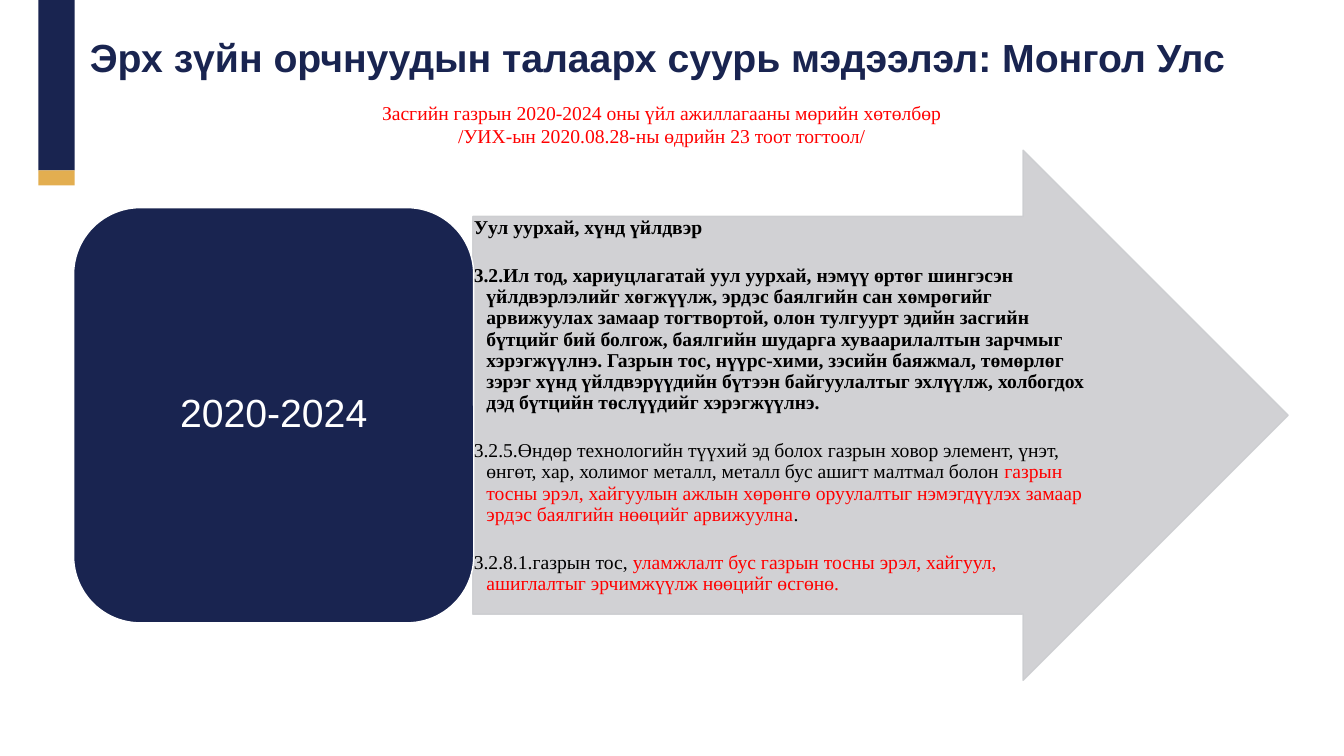
from lxml.etree import SubElement
from pptx import Presentation
from pptx.dml.color import RGBColor
from pptx.enum.shapes import MSO_SHAPE
from pptx.enum.text import MSO_ANCHOR, PP_ALIGN
from pptx.oxml.ns import qn
from pptx.util import Pt

NAVY, GOLD, GREY = "192450", "E3AE50", "CCCDD0"
BLACK, RED, WHITE = "000000", "FF0000", "FFFFFF"
SERIF, SANS = "Times New Roman", "Arial"

TITLE = "Эрх зүйн орчнуудын талаарх суурь мэдээлэл: Монгол Улс"
PROGRAMME = [
    "Засгийн газрын 2020-2024 оны үйл ажиллагааны мөрийн хөтөлбөр",
    "/УИХ-ын 2020.08.28-ны өдрийн 23 тоот тогтоол/",
]
# Each goal is a list of (text, colour, bold) spans
GOALS = [
    [("Уул уурхай, хүнд үйлдвэр", BLACK, True)],
    [("3.2.Ил тод, хариуцлагатай уул уурхай, нэмүү өртөг шингэсэн "
      "үйлдвэрлэлийг хөгжүүлж, эрдэс баялгийн сан хөмрөгийг арвижуулах "
      "замаар тогтвортой, олон тулгуурт эдийн засгийн бүтцийг бий болгож, "
      "баялгийн шударга хуваарилалтын зарчмыг хэрэгжүүлнэ. Газрын тос, "
      "нүүрс-хими, зэсийн баяжмал, төмөрлөг зэрэг хүнд үйлдвэрүүдийн бүтээн "
      "байгуулалтыг эхлүүлж, холбогдох дэд бүтцийн төслүүдийг "
      "хэрэгжүүлнэ.", BLACK, True)],
    [("3.2.5.Өндөр технологийн түүхий эд болох газрын ховор элемент, үнэт, "
      "өнгөт, хар, холимог металл, металл бус ашигт малтмал болон ",
      BLACK, False),
     ("газрын тосны эрэл, хайгуулын ажлын хөрөнгө оруулалтыг нэмэгдүүлэх "
      "замаар эрдэс баялгийн нөөцийг арвижуулна", RED, False),
     (".", BLACK, False)],
    [("3.2.8.1.газрын тос, ", BLACK, False),
     ("уламжлалт бус газрын тосны эрэл, хайгуул, ашиглалтыг эрчимжүүлж "
      "нөөцийг өсгөнө.", RED, False)],
]


def colour(value):
    return RGBColor.from_string(value)


def apply(target, values):
    for name, value in values.items():
        setattr(target, name, value)


def set_alpha(fill_format, shape_part, percent):
    """Make the solid colour of a shape part partly see-through."""
    tone = shape_part.find(qn("a:solidFill")).find(qn("a:srgbClr"))
    SubElement(tone, qn("a:alpha"), val=str(percent * 1000))


def add_block(page, kind, place, fill, line=None, alpha=None):
    block = page.shapes.add_shape(kind, *map(Pt, place))
    block.shadow.inherit = False
    block.fill.solid()
    block.fill.fore_color.rgb = colour(fill)
    if line:
        block.line.color.rgb = colour(line)
        block.line.width = Pt(1)
    else:
        block.line.fill.background()
    if alpha:
        properties = block.fill._xPr
        set_alpha(block.fill, properties, alpha)
        set_alpha(block.line, properties.find(qn("a:ln")), alpha)
    return block


def set_frame(box, anchor, margins):
    left, top, right, bottom = map(Pt, margins)
    apply(box.text_frame, dict(
        word_wrap=True, vertical_anchor=anchor, margin_left=left,
        margin_top=top, margin_right=right, margin_bottom=bottom))


def write(box, paragraphs, font, size, **layout):
    frame = box.text_frame
    for index, spans in enumerate(paragraphs):
        para = frame.add_paragraph() if index else frame.paragraphs[0]
        apply(para, layout)
        for text, tone, bold in spans:
            span = para.add_run()
            span.text = text
            apply(span.font, dict(name=font, size=Pt(size), bold=bold))
            span.font.color.rgb = colour(tone)


def set_hanging_indent(box, points):
    for para in box.text_frame.paragraphs:
        properties = para._p.get_or_add_pPr()
        properties.set("marL", str(Pt(points)))
        properties.set("indent", str(-Pt(points)))


def add_title(page):
    title = page.shapes.title
    apply(title, dict(left=Pt(57), top=Pt(17.3),
                      width=Pt(877), height=Pt(63.4)))
    set_frame(title, MSO_ANCHOR.TOP, (7.2, 6.4, 7.2, 3.6))
    write(title, [[(TITLE, NAVY, True)]], SANS, 28,
          alignment=PP_ALIGN.LEFT, line_spacing=1.0, space_before=Pt(0))


def add_programme(page):
    box = page.shapes.add_textbox(Pt(57), Pt(68.4), Pt(831.6), Pt(41))
    set_frame(box, MSO_ANCHOR.TOP, (7.2, 3.6, 7.2, 3.6))
    write(box, [[(line, RED, False)] for line in PROGRAMME], SERIF, 14,
          alignment=PP_ALIGN.CENTER)


def add_goals_arrow(page):
    arrow = add_block(page, MSO_SHAPE.RIGHT_ARROW, (337.7, 107.3, 582.5, 378.7),
                      GREY, GREY, 90)
    arrow.adjustments[0], arrow.adjustments[1] = 0.75, 0.5
    set_frame(arrow, MSO_ANCHOR.TOP, (0.7, 0.7, 0.7, 0.7))
    write(arrow, GOALS, SERIF, 14, alignment=PP_ALIGN.LEFT,
          line_spacing=0.9, space_after=Pt(19.2))
    set_hanging_indent(arrow, 9)


def add_period(page):
    card = add_block(page, MSO_SHAPE.ROUNDED_RECTANGLE,
                     (52.6, 148.3, 285.8, 296.6), NAVY, WHITE)
    set_frame(card, MSO_ANCHOR.MIDDLE, (8.6, 4.3, 8.6, 4.3))
    write(card, [[("2020-2024", WHITE, False)]], SANS, 28,
          alignment=PP_ALIGN.CENTER, line_spacing=0.9)


def main():
    deck = Presentation()
    apply(deck, dict(slide_width=Pt(960), slide_height=Pt(540)))
    page = deck.slides.add_slide(deck.slide_layouts[5])

    # Corner ribbon
    add_block(page, MSO_SHAPE.RECTANGLE, (27.4, 0, 26, 121.7), NAVY)
    add_block(page, MSO_SHAPE.RECTANGLE, (27.4, 121.7, 26, 10.8), GOLD)

    # Period and its goals
    add_goals_arrow(page)
    add_period(page)

    # Headings
    add_title(page)
    add_programme(page)

    deck.save("out.pptx")


if __name__ == "__main__":
    main()
